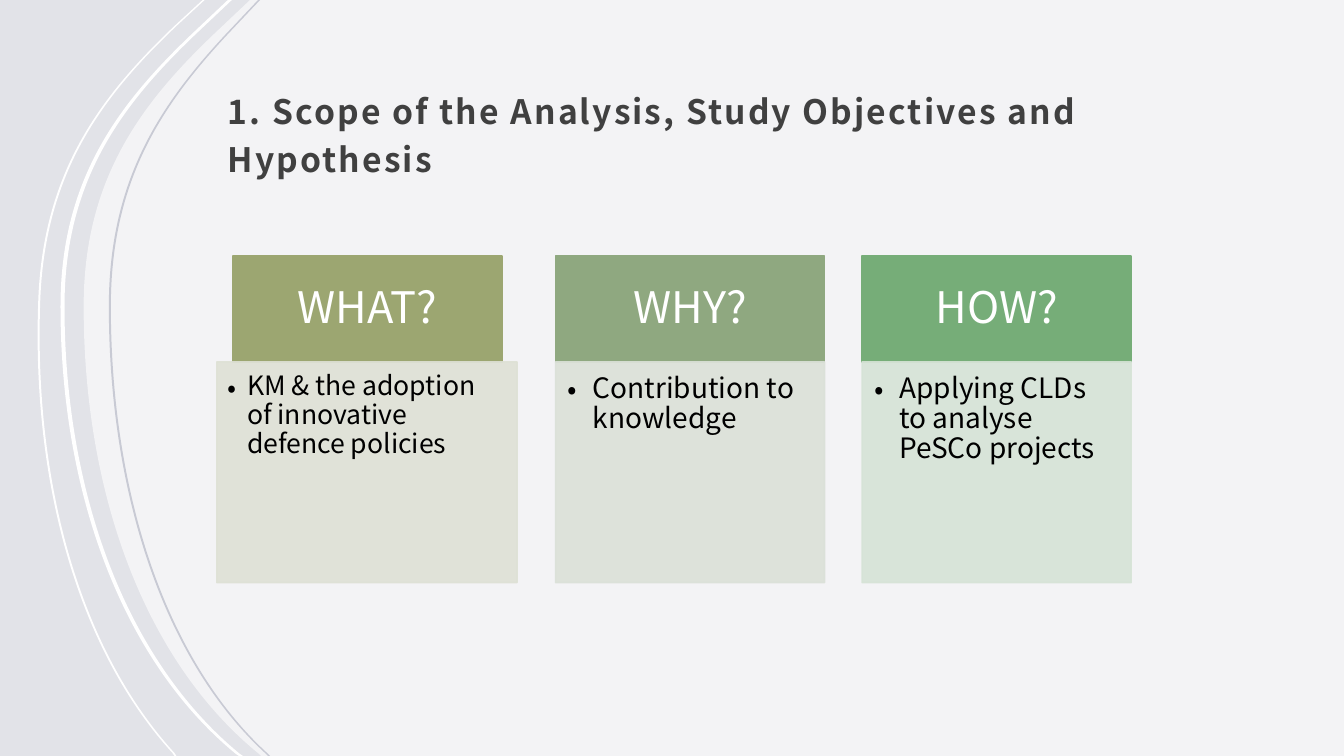
"""Build the slide on scope, objectives and hypothesis."""
from lxml import etree
from pptx import Presentation
from pptx.dml.color import RGBColor
from pptx.enum.shapes import MSO_SHAPE
from pptx.enum.text import MSO_ANCHOR, MSO_AUTO_SIZE, PP_ALIGN
from pptx.oxml.ns import qn
from pptx.util import Inches, Pt

RECT = MSO_SHAPE.RECTANGLE
TOP, MIDDLE, BOTTOM = MSO_ANCHOR.TOP, MSO_ANCHOR.MIDDLE, MSO_ANCHOR.BOTTOM
LEFT, CENTER = PP_ALIGN.LEFT, PP_ALIGN.CENTER
NO_FIT = MSO_AUTO_SIZE.NONE

FONT = "Noto Sans CJK JP"
BACK = RGBColor(0xE2, 0xE3, 0xE8)
WHITE = RGBColor(0xFF, 0xFF, 0xFF)
GREY = RGBColor(0xC8, 0xCA, 0xD4)
DARK = RGBColor(0x40, 0x40, 0x40)
BLACK = RGBColor(0, 0, 0)
OLIVE = RGBColor(0x9C, 0xA6, 0x71)
SAGE = RGBColor(0x8F, 0xA8, 0x80)
GREEN = RGBColor(0x76, 0xAD, 0x78)
PALE_OLIVE = RGBColor(0xDE, 0xE1, 0xD5)
PALE_SAGE = RGBColor(0xDB, 0xE1, 0xD8)
PALE_GREEN = RGBColor(0xD6, 0xE3, 0xD6)

WIDTH, HEIGHT = 13.33, 7.5
DEEP = (0, 0.35, 1.04, 1.79, 3.04, 4.92, 6.57, 7.48, HEIGHT)
HIGH = (0, 0.24, 0.93, 1.68, 2.97, 4.8, 6.45, 7.47, HEIGHT)
PANEL = (2.48, 2.11, 1.39, 0.83, 0.83, 0.83, 1.45, 2.57, 2.59)
RIBBONS = (
    ((2.01, 1.75, 1.02, 0.43, 0.38, 0.31, 0.78, 1.71, 1.73), HIGH, 0.02, WHITE),
    ((2.26, 1.89, 1.17, 0.6, 0.6, 0.6, 1.23, 2.34, 2.37), DEEP, 0.04, WHITE),
    ((2.56, 2.23, 1.59, 1.08, 1.08, 1.08, 1.64, 2.64, 2.66), DEEP, 0.02, GREY),
)

HEAD_TOP, HEAD_TALL = 2.54, 1.05
BODY_TOP, BODY_TALL = 3.59, 2.19
CARD = 2.67
CARDS = (
    ("WHAT?", "KM & the adoption of innovative defence policies",
     2.31, 2.15, 2.98, 19, 0.19, 0.11, OLIVE, PALE_OLIVE),
    ("WHY?", "Contribution to knowledge",
     5.51, 5.51, CARD, 20, 0.25, 0.12, SAGE, PALE_SAGE),
    ("HOW?", "Applying CLDs to analyse PeSCo projects",
     8.55, 8.55, CARD, 20, 0.25, 0.12, GREEN, PALE_GREEN),
)


def fade(shape, percent):
    """Set the opacity of every solid colour of a shape."""
    for color in shape._element.spPr.iter(qn("a:srgbClr")):
        alpha = etree.SubElement(color, qn("a:alpha"))
        alpha.set("val", str(percent * 1000))


def write(shape, text, size, color, insets, anchor=TOP, align=LEFT,
          bold=False, spacing=0.9, track=0, indent=0):
    """Put one formatted paragraph into a shape."""
    frame = shape.text_frame
    frame.auto_size = NO_FIT
    frame.word_wrap = True
    frame.vertical_anchor = anchor
    (frame.margin_left, frame.margin_top,
     frame.margin_right, frame.margin_bottom) = map(Inches, insets)
    para = frame.paragraphs[0]
    para.alignment = align
    para.line_spacing = spacing
    para.space_before = Pt(0)
    if indent:
        props = para._p.get_or_add_pPr()
        props.set("marL", str(Inches(indent)))
        props.set("indent", str(-Inches(indent)))
        etree.SubElement(props, qn("a:buFont")).set("typeface", FONT)
        etree.SubElement(props, qn("a:buChar")).set("char", "•")
    run = para.add_run()
    run.text = text
    font = run.font
    font.name, font.size, font.bold = FONT, Pt(size), bold
    font.color.rgb = color
    if track:
        run._r.get_or_add_rPr().set("spc", str(int(track * 100)))


def add_box(slide, left, top, width, height, color):
    """Add a rectangle with fill and line of one colour."""
    box = slide.shapes.add_shape(
        RECT, Inches(left), Inches(top), Inches(width), Inches(height))
    box.shadow.inherit = False
    box.fill.solid()
    box.fill.fore_color.rgb = color
    box.line.color.rgb = color
    box.line.width = Pt(1)
    return box


def trace(xs, ys):
    """Return steps along an edge: a point, or two handles and a point."""
    dots = [(Inches(x), Inches(y)) for x, y in zip(xs, ys)]
    return [dots[0:1], dots[1:2], dots[2:5], dots[5:8], dots[8:]]


def bend(shape, steps):
    """Turn the segments that have handles into Bezier curves."""
    lines = list(shape._element.iter(qn("a:lnTo")))
    for line, (*handles, _) in zip(lines, steps[1:]):
        if handles:
            line.tag = qn("a:cubicBezTo")
            for spot, (x, y) in enumerate(handles):
                point = etree.Element(qn("a:pt"))
                point.set("x", str(x - shape.left))
                point.set("y", str(y - shape.top))
                line.insert(spot, point)


def add_curve(slide, steps, color):
    """Add a closed, filled outline without a line."""
    ends = [step[-1] for step in steps]
    maker = slide.shapes.build_freeform(*ends[0])
    maker.add_line_segments(ends[1:], close=True)
    shape = maker.convert_to_shape()
    bend(shape, steps)
    shape.shadow.inherit = False
    shape.fill.solid()
    shape.fill.fore_color.rgb = color
    shape.line.fill.background()
    return shape


def add_back(slide):
    """Add the pale panel and the curved ribbons."""
    slide.background.fill.solid()
    slide.background.fill.fore_color.rgb = BACK
    right = Inches(WIDTH)
    corners = [[(right, Inches(HEIGHT))], [(right, 0)]]
    fade(add_curve(slide, trace(PANEL, DEEP) + corners, WHITE), 60)
    for xs, ys, thick, color in RIBBONS:
        side = trace([x + thick for x in xs[::-1]], ys[::-1])
        add_curve(slide, trace(xs, ys) + side, color)


def add_title(slide, text):
    """Place the title in front of the ribbons and fill it."""
    title = slide.shapes.title
    slide.shapes._spTree.append(title._element)
    title.left, title.top = Inches(2.14), Inches(0.41)
    title.width, title.height = Inches(9.52), Inches(1.47)
    write(title, text, 24, DARK, (0.12, 0.12, 0.12, 0.1), anchor=BOTTOM,
          bold=True, spacing=1.2, track=1.5)


def add_card(slide, name, text, head_left, left, width, size, indent, inset,
             color, pale):
    """Add a heading box with its list box below."""
    head = add_box(slide, head_left, HEAD_TOP, CARD, HEAD_TALL, color)
    write(head, name, 31, WHITE, (0.24, 0.14, 0.24, 0.14),
          anchor=MIDDLE, align=CENTER)
    body = add_box(slide, left, BODY_TOP, width, BODY_TALL, pale)
    fade(body, 90)
    write(body, text, size, BLACK, (inset, inset, inset + 0.04, 0.17),
          indent=indent)


def main():
    """Build and save the slide."""
    deck = Presentation()
    deck.slide_width, deck.slide_height = Inches(WIDTH), Inches(HEIGHT)
    slide = deck.slides.add_slide(deck.slide_layouts[5])
    add_back(slide)
    add_title(slide, "1. Scope of the Analysis, Study Objectives and Hypothesis")
    for card in CARDS:
        add_card(slide, *card)
    deck.save("out.pptx")


if __name__ == "__main__":
    main()
